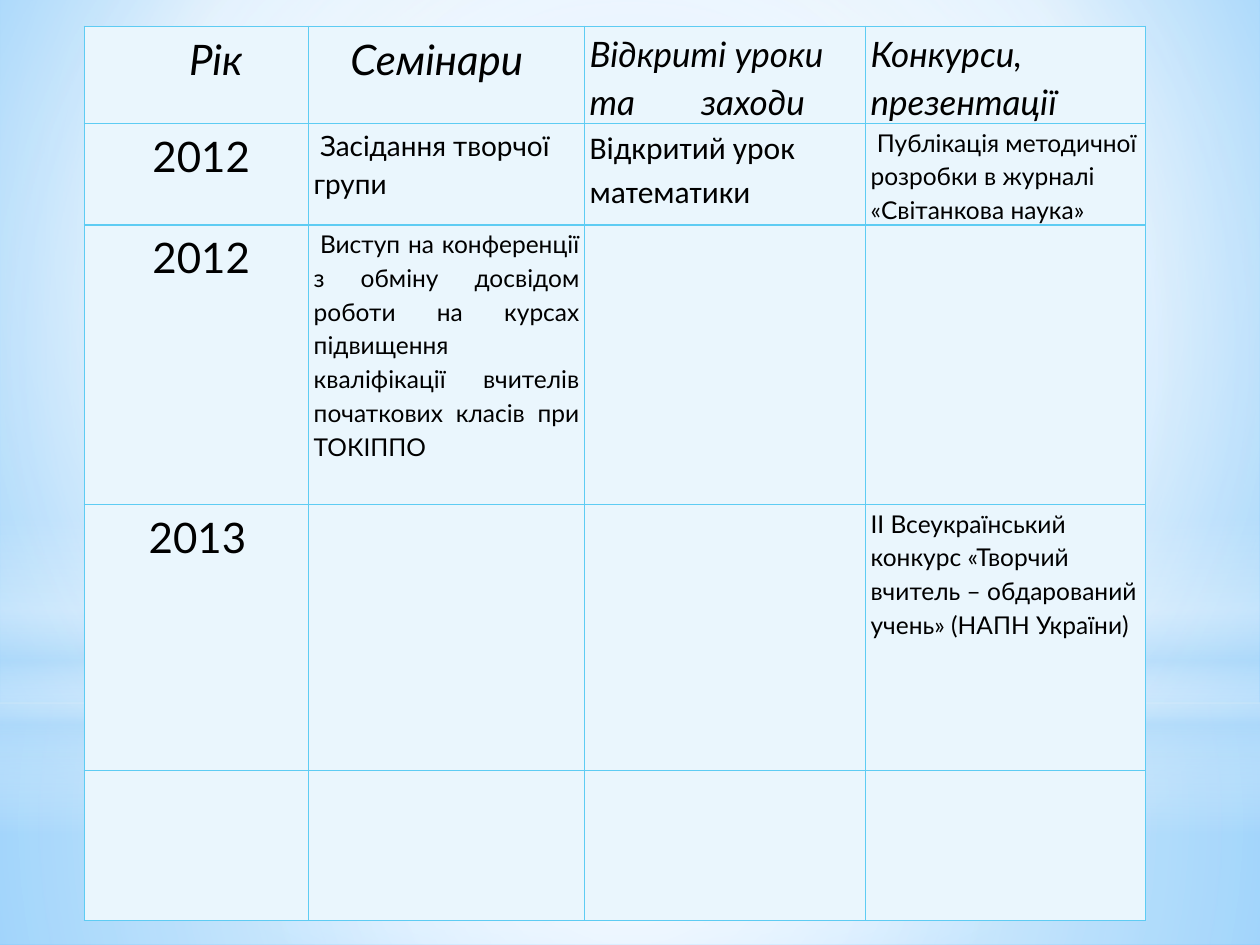
from lxml.etree import SubElement
from pptx import Presentation
from pptx.dml.color import RGBColor
from pptx.enum.shapes import MSO_SHAPE
from pptx.enum.text import PP_ALIGN
from pptx.oxml.ns import qn
from pptx.util import Inches, Pt

BORDER, CELL_FILL, TEXT = "5ECCF3", "EAF6FD", "000000"
COLUMNS = [1.78, 2.19, 2.23, 2.22]
ROWS = [0.69, 0.8, 2.22, 2.11, 1.19]

CENTER = (50, 50, 50, 50)
BACKDROP = [(0, "9ED5FF", 100), (60, "FFFFFF", 100), (100, "5BB9FF", 100)]
LOWER_GLOW = [(0, "FFFEFF", 91), (37, "FFFEFF", 76), (100, "B4DCFA", 79)]
UPPER_GLOW = [(0, "FFFEFF", 89), (48, "FFFEFF", 62), (100, "B4DCFA", 79)]
HORIZON = [(0, "FFFEFF", 0), (29, "FFFEFF", 30), (45, "B4DCFA", 40),
           (55, "FFFEFF", 26), (65, "B4DCFA", 60), (100, "FFFEFF", 0)]
HALO = [(0, "FFFEFF", 100), (56, "FFFEFF", 0)]

ENTRIES = {
    (0, 0): dict(text="Рік", size=24, italic=True, indent=0.79),
    (0, 1): dict(text="Семінари", size=24, italic=True, indent=0.29),
    (0, 2): dict(text="Відкриті уроки та", size=20, italic=True, spaced_word="заходи"),
    (0, 3): dict(text="Конкурси, презентації", size=20, italic=True),
    (1, 0): dict(text="2012", size=24, indent=0.5),
    (1, 1): dict(text="Засідання творчої групи", size=16, indent=0.05),
    (1, 2): dict(text="Відкритий урок математики", size=18, face="Calibri"),
    (1, 3): dict(text="Публікація методичної розробки в журналі «Світанкова наука»",
                 size=14, indent=0.05),
    (2, 0): dict(text="2012", size=24, indent=0.5),
    (2, 1): dict(text="Виступ на конференції з обміну досвідом роботи на курсах "
                      "підвищення кваліфікації вчителів початкових класів при ТОКІППО",
                 size=14, indent=0.05, align=PP_ALIGN.JUSTIFY),
    (3, 0): dict(text="2013", size=24, indent=0.47),
    (3, 3): dict(text="ІІ Всеукраїнський конкурс «Творчий вчитель – обдарований "
                      "учень» (НАПН України)", size=14),
}


def color(hex_value):
    return RGBColor.from_string(hex_value)


def add_color(parent, hex_value, opacity=100):
    tint = SubElement(parent, qn("a:srgbClr"), val=hex_value)
    if opacity < 100:
        SubElement(tint, qn("a:alpha"), val=str(opacity * 1000))


def apply_gradient(fill, owner, stops, focus=None):
    fill.gradient()
    gradient = next(owner.iter(qn("a:gradFill")))
    for child in list(gradient):
        gradient.remove(child)
    stop_list = SubElement(gradient, qn("a:gsLst"))
    for position, hex_value, opacity in stops:
        stop = SubElement(stop_list, qn("a:gs"), pos=str(position * 1000))
        add_color(stop, hex_value, opacity)
    if focus:
        circle = SubElement(gradient, qn("a:path"), path="circle")
        edges = {edge: str(value * 1000) for edge, value in zip("ltrb", focus)}
        SubElement(circle, qn("a:fillToRect"), **edges)
    else:
        SubElement(gradient, qn("a:lin"), ang="5400000", scaled="0")


def add_glow(slide, preset, top, height, width, stops, focus=None):
    glow = slide.shapes.add_shape(preset, 0, Inches(top), width, Inches(height))
    glow.shadow.inherit = False
    glow.line.fill.background()
    apply_gradient(glow.fill, glow._element.spPr, stops, focus)


def add_sky(slide, width):
    apply_gradient(slide.background.fill, slide._element, BACKDROP, (20, 10, 20, 60))
    add_glow(slide, MSO_SHAPE.RECTANGLE, 5.58, 1.92, width, LOWER_GLOW, CENTER)
    add_glow(slide, MSO_SHAPE.RECTANGLE, 0, 5.58, width, UPPER_GLOW, CENTER)
    add_glow(slide, MSO_SHAPE.RECTANGLE, 4.12, 2.5, width, HORIZON)
    add_glow(slide, MSO_SHAPE.OVAL, 1.75, 5.58, width, HALO, CENTER)


def style_cell(cell):
    cell.margin_left = cell.margin_right = Inches(0.04)
    cell.margin_top = cell.margin_bottom = 0
    properties = cell._tc.get_or_add_tcPr()
    for side in ("lnL", "lnR", "lnT", "lnB"):
        border = SubElement(properties, qn(f"a:{side}"), w=str(Pt(1)))
        add_color(SubElement(border, qn("a:solidFill")), BORDER)
    cell.fill.solid()
    cell.fill.fore_color.rgb = color(CELL_FILL)


def add_spaced_word(paragraph, word):
    gap = paragraph.add_run()
    gap.text = " "
    gap._r.get_or_add_rPr().set("spc", "3300")
    paragraph.add_run().text = word


def write_entry(cell, text, size, italic=False, face="Lato", indent=0,
                spaced_word=None, align=PP_ALIGN.LEFT):
    paragraph = cell.text_frame.paragraphs[0]
    paragraph.text = text
    if spaced_word:
        add_spaced_word(paragraph, spaced_word)
    paragraph.alignment = align
    paragraph.line_spacing = 1.15
    paragraph.space_after = Pt(10)
    paragraph._p.get_or_add_pPr().set("indent", str(Inches(indent)))
    font = paragraph.font
    font.name, font.size = face, Pt(size)
    font.bold, font.italic = False, italic
    font.color.rgb = color(TEXT)


def add_activity_table(slide, left, top):
    table = slide.shapes.add_table(
        len(ROWS), len(COLUMNS), left, top,
        Inches(sum(COLUMNS)), Inches(sum(ROWS))).table
    table.first_row = table.horz_banding = False
    for column, width in zip(table.columns, COLUMNS):
        column.width = Inches(width)
    for row, height in zip(table.rows, ROWS):
        row.height = Inches(height)
    for cell in table.iter_cells():
        style_cell(cell)
    for position, entry in ENTRIES.items():
        write_entry(table.cell(*position), **entry)


def main():
    deck = Presentation()
    deck.slide_width, deck.slide_height = Inches(10), Inches(7.5)
    slide = deck.slides.add_slide(deck.slide_layouts[6])
    add_sky(slide, deck.slide_width)
    add_activity_table(slide, Inches(0.67), Inches(0.21))
    deck.save("out.pptx")


if __name__ == "__main__":
    main()
